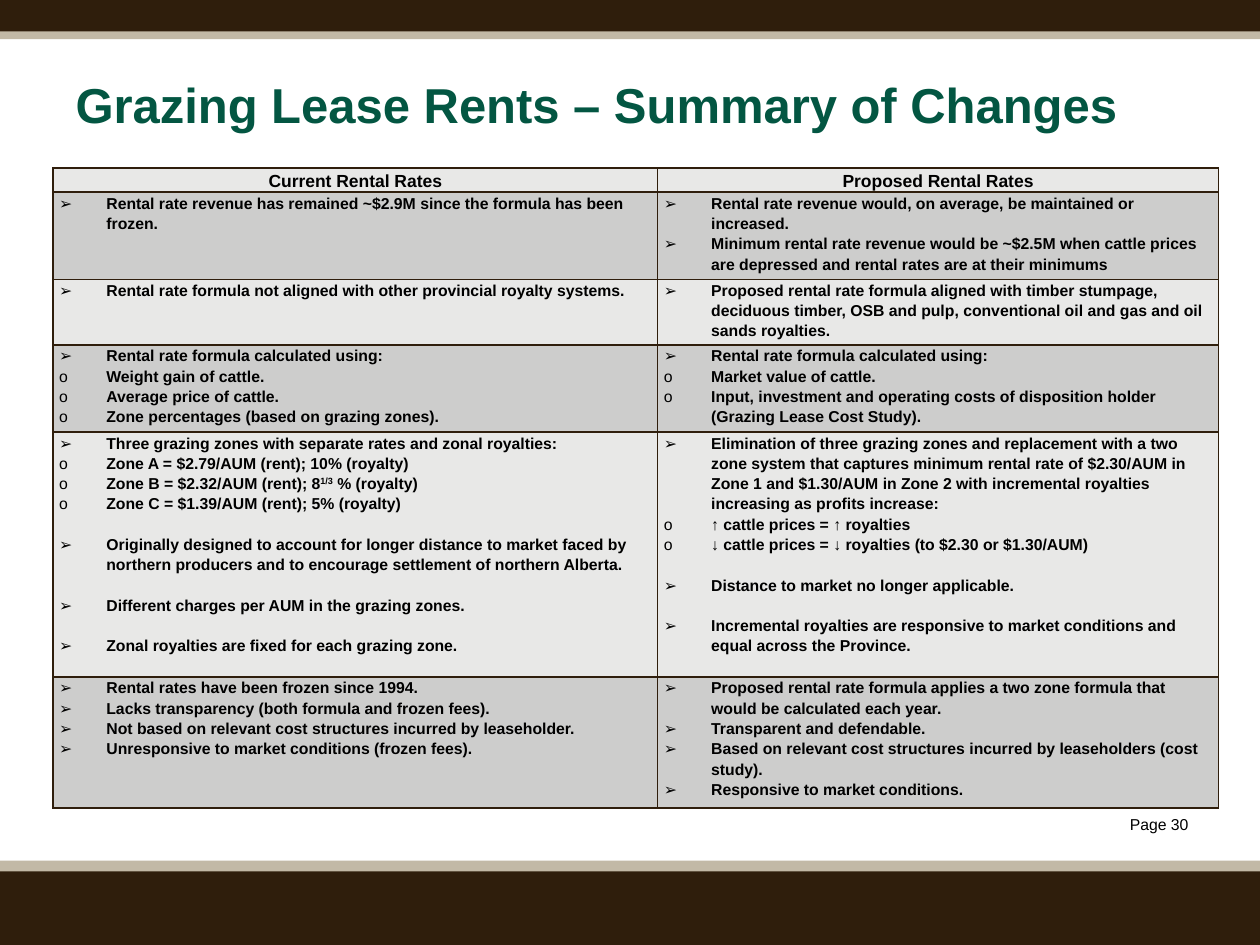
from pptx import Presentation
from pptx.dml.color import RGBColor
from pptx.enum.shapes import MSO_SHAPE
from pptx.enum.text import MSO_ANCHOR, MSO_AUTO_SIZE, PP_ALIGN
from pptx.oxml.ns import qn
from pptx.util import Pt
from lxml import etree

RECTANGLE = MSO_SHAPE.RECTANGLE
TOP, MIDDLE = MSO_ANCHOR.TOP, MSO_ANCHOR.MIDDLE
LEFT, CENTER, RIGHT = PP_ALIGN.LEFT, PP_ALIGN.CENTER, PP_ALIGN.RIGHT
NO_FIT = MSO_AUTO_SIZE.NONE

COLORS = {
    "brown": "2F1E0C",
    "tan": "C2B9A6",
    "green": "035642",
    "black": "000000",
    "light": "E8E8E7",
    "dark": "CDCDCC",
}

# "o " starts a sub-point, "" leaves a one-line gap, ^ encloses superscript
HEADERS = ["Current Rental Rates", "Proposed Rental Rates"]
COMPARISON = [
    (["Rental rate revenue has remained ~$2.9M since the formula has been frozen."],
     ["Rental rate revenue would, on average, be maintained or increased.",
      "Minimum rental rate revenue would be ~$2.5M when cattle prices are depressed "
      "and rental rates are at their minimums"]),
    (["Rental rate formula not aligned with other provincial royalty systems."],
     ["Proposed rental rate formula aligned with timber stumpage, deciduous timber, "
      "OSB and pulp, conventional oil and gas and oil sands royalties."]),
    (["Rental rate formula calculated using:",
      "o Weight gain of cattle.",
      "o Average price of cattle.",
      "o Zone percentages (based on grazing zones)."],
     ["Rental rate formula calculated using:",
      "o Market value of cattle.",
      "o Input, investment and operating costs of disposition holder "
      "(Grazing Lease Cost Study)."]),
    (["Three grazing zones with separate rates and zonal royalties:",
      "o Zone A = $2.79/AUM (rent); 10% (royalty)",
      "o Zone B = $2.32/AUM (rent); 8^1/3^ % (royalty)",
      "o Zone C = $1.39/AUM (rent); 5% (royalty)",
      "",
      "Originally designed to account for longer distance to market faced by northern "
      "producers and to encourage settlement of northern Alberta.",
      "",
      "Different charges per AUM in the grazing zones.",
      "",
      "Zonal royalties are fixed for each grazing zone."],
     ["Elimination of three grazing zones and replacement with a two zone system that "
      "captures minimum rental rate of $2.30/AUM in Zone 1 and $1.30/AUM in Zone 2 "
      "with incremental royalties increasing as profits increase:",
      "o ↑ cattle prices = ↑ royalties",
      "o ↓ cattle prices = ↓ royalties (to $2.30 or $1.30/AUM)",
      "",
      "Distance to market no longer applicable.",
      "",
      "Incremental royalties are responsive to market conditions and equal across "
      "the Province."]),
    (["Rental rates have been frozen since 1994.",
      "Lacks transparency (both formula and frozen fees).",
      "Not based on relevant cost structures incurred by leaseholder.",
      "Unresponsive to market conditions (frozen fees)."],
     ["Proposed rental rate formula applies a two zone formula that would be "
      "calculated each year.",
      "Transparent and defendable.",
      "Based on relevant cost structures incurred by leaseholders (cost study).",
      "Responsive to market conditions."]),
]


class SlideBuilder:
    font = "Arial"
    line_spacing = 1.15
    gap = 11.6
    indent = 27

    def __init__(self, slide):
        self.slide = slide

    def color(self, name):
        return RGBColor.from_string(COLORS[name])

    def format_runs(self, paragraph, size, color="black", bold=True):
        for run in paragraph.runs:
            run.font.name = self.font
            run.font.size = Pt(size)
            run.font.bold = bold
            run.font.color.rgb = self.color(color)

    def band(self, top, height, color):
        band = self.slide.shapes.add_shape(RECTANGLE, 0, Pt(top), Pt(720), Pt(height))
        band.shadow.inherit = False
        band.fill.solid()
        band.fill.fore_color.rgb = self.color(color)
        band.line.fill.background()

    def title(self, text, left, top, width, height):
        title = self.slide.shapes.title
        title.left, title.top = Pt(left), Pt(top)
        title.width, title.height = Pt(width), Pt(height)
        frame = title.text_frame
        frame.text = text
        frame.auto_size = NO_FIT
        frame.vertical_anchor = TOP
        frame.margin_top = Pt(6.5)
        frame.paragraphs[0].alignment = LEFT
        self.format_runs(frame.paragraphs[0], 28, "green")

    def page_label(self, text, left, top, width, height):
        box = self.slide.shapes.add_textbox(Pt(left), Pt(top), Pt(width), Pt(height))
        frame = box.text_frame
        frame.word_wrap = True
        frame.text = text
        frame.paragraphs[0].alignment = RIGHT
        self.format_runs(frame.paragraphs[0], 9, bold=False)

    def bullet(self, paragraph, mark):
        properties = paragraph._p.get_or_add_pPr()
        properties.set("marL", str(Pt(self.indent)))
        properties.set("indent", str(-Pt(self.indent)))
        etree.SubElement(properties, qn("a:buFont")).set("typeface", self.font)
        etree.SubElement(properties, qn("a:buChar")).set("char", mark)

    def borders(self, cell):
        for side in ("a:lnL", "a:lnR", "a:lnT", "a:lnB"):
            line = etree.SubElement(cell._tc.get_or_add_tcPr(), qn(side))
            line.set("w", str(Pt(1)))
            fill = etree.SubElement(line, qn("a:solidFill"))
            etree.SubElement(fill, qn("a:srgbClr")).set("val", COLORS["brown"])

    def style_cell(self, cell, fill):
        self.borders(cell)
        cell.fill.solid()
        cell.fill.fore_color.rgb = self.color(fill)
        cell.margin_left = cell.margin_right = Pt(3.6)
        cell.margin_top = cell.margin_bottom = 0

    def header(self, cell, text):
        cell.text = text
        cell.vertical_anchor = MIDDLE
        paragraph = cell.text_frame.paragraphs[0]
        paragraph.alignment = CENTER
        paragraph.line_spacing = self.line_spacing
        self.format_runs(paragraph, 10)

    def points(self, cell, points):
        frame = cell.text_frame
        frame.text = "\n".join(point.removeprefix("o ") for point in points if point)
        paragraphs = iter(frame.paragraphs)
        space = 0
        for point in points:
            if not point:
                space = self.gap
                continue
            paragraph = next(paragraphs)
            paragraph.line_spacing = self.line_spacing
            paragraph.space_before = Pt(space)
            space = 0
            self.bullet(paragraph, "o" if point.startswith("o ") else "➢")
            self.superscript(paragraph)
            self.format_runs(paragraph, 9)

    def superscript(self, paragraph):
        pieces = paragraph.text.split("^")
        paragraph.text = pieces[0]
        for number, piece in enumerate(pieces[1:], 1):
            run = paragraph.add_run()
            run.text = piece
            if number % 2:
                run._r.get_or_add_rPr().set("baseline", "30000")

    def table(self, left, top, widths, heights, headers, rows):
        table = self.slide.shapes.add_table(
            len(heights), len(widths), Pt(left), Pt(top),
            Pt(sum(widths)), Pt(sum(heights))).table
        for column, width in zip(table.columns, widths):
            column.width = Pt(width)
        for row, height in zip(table.rows, heights):
            row.height = Pt(height)
        for r, contents in enumerate([headers, *rows]):
            for c, content in enumerate(contents):
                cell = table.cell(r, c)
                self.style_cell(cell, "dark" if r % 2 else "light")
                if r == 0:
                    self.header(cell, content)
                else:
                    self.points(cell, content)


def main():
    deck = Presentation()
    deck.slide_width, deck.slide_height = Pt(720), Pt(540)
    builder = SlideBuilder(deck.slides.add_slide(deck.slide_layouts[5]))

    # Bottom and top bands
    builder.band(491.8, 12.2, "tan")
    builder.band(498, 42, "brown")
    builder.band(16.6, 5.8, "tan")
    builder.band(0, 18, "brown")

    # Page number, comparison table and title
    builder.page_label("Page 30", 608.4, 462.2, 77.8, 18)
    builder.table(30.2, 96, [345.6, 320.4], [13.7, 49.7, 37.5, 49.6, 140, 74.5],
                  HEADERS, COMPARISON)
    builder.title("Grazing Lease Rents – Summary of Changes", 36, 36, 618, 57.6)

    deck.save("out.pptx")


if __name__ == "__main__":
    main()
